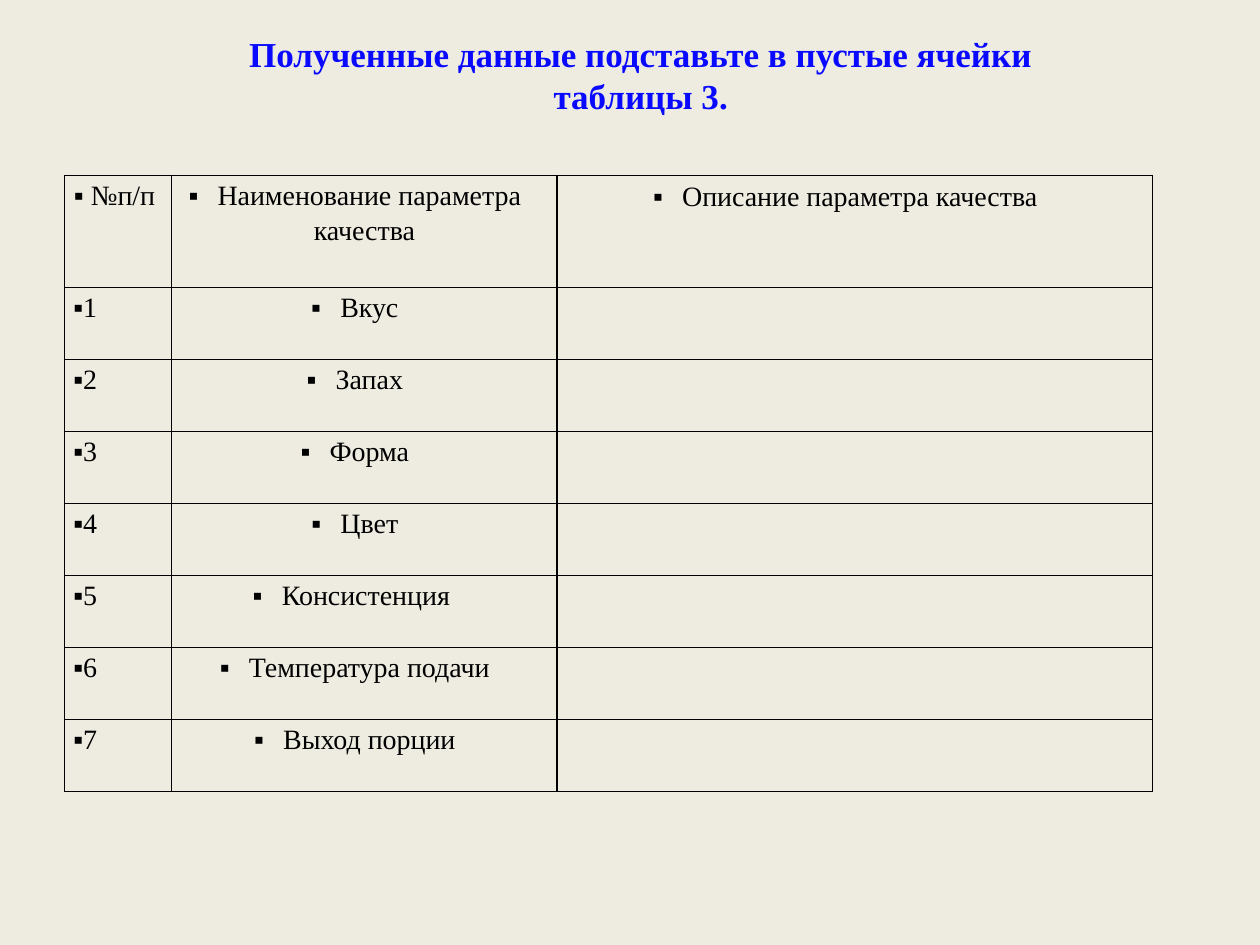
"""Build a slide with a title and a table of quality parameters."""
from lxml import etree
from pptx import Presentation, util as u
from pptx.dml.color import RGBColor
from pptx.enum import text
from pptx.oxml import ns

TITLE = "Полученные данные подставьте в пустые ячейки \vтаблицы 3. "
HEADERS = ["№п/п", "Наименование параметра качества", "Описание параметра качества"]
PARAMETERS = ["Вкус", "Запах", "Форма", "Цвет", "Консистенция ",
              "Температура подачи", "Выход порции"]
COLUMNS = [61.2, 220.3, 340.3]
HEADER_HEIGHT, ROW_HEIGHT = 64.2, 41.15
TABLE_LEFT, TABLE_TOP = 36.9, 100.2
NUMBER_HEADER_HANG, CENTER_HANG = 9.7, 16.6
TITLE_BOX = {"left": 54, "top": 15.1, "width": 629.3, "height": 79.9}
INSETS = {"margin_left": 5, "margin_right": 5, "margin_top": 0, "margin_bottom": 0}
TITLE_FONT = {"name": "Times New Roman", "size": u.Pt(20), "bold": True}
CELL_FONT = {"name": "Times New Roman", "size": u.Pt(16), "bold": False}
CENTER, LEFT = text.PP_ALIGN.CENTER, text.PP_ALIGN.LEFT


def assign(target, values):
    for name, value in values.items():
        setattr(target, name, value)


def in_points(values):
    return {name: u.Pt(value) for name, value in values.items()}


def color(target, value):
    target.rgb = RGBColor.from_string(value)


def add_element(parent, tag, **attributes):
    return etree.SubElement(parent, ns.qn(tag), attributes)


def add_bullet(para, hang):
    para.space_before = u.Pt(3.2)
    properties = para._p.get_or_add_pPr()
    properties.set("marL", "0")
    properties.set("indent", str(-u.Pt(hang)))
    add_element(add_element(properties, "a:buClr"), "a:srgbClr", val="000000")
    add_element(properties, "a:buFont", typeface="Times New Roman")
    add_element(properties, "a:buChar", char="▪")


def add_borders(cell):
    properties = cell._tc.get_or_add_tcPr()
    for side in ("a:lnL", "a:lnR", "a:lnT", "a:lnB"):
        line = add_element(properties, side, w=str(u.Pt(1)))
        add_element(add_element(line, "a:solidFill"), "a:srgbClr", val="000000")


def fill_cell(cell, wording, align, hang, compact):
    add_borders(cell)
    cell.fill.background()
    if not wording:
        return
    para = cell.text_frame.paragraphs[0]
    para.alignment = align
    if compact:
        assign(cell, in_points(INSETS))
        para.line_spacing = 1.15
    add_bullet(para, hang)
    span = para.add_run()
    span.text = wording
    assign(span.font, CELL_FONT)
    color(span.font.color, "000000")


def add_title(page):
    box = page.shapes.title
    assign(box, in_points(TITLE_BOX))
    frame = box.text_frame
    assign(frame, {"text": TITLE, "word_wrap": True,
                   "vertical_anchor": text.MSO_ANCHOR.TOP,
                   "auto_size": text.MSO_AUTO_SIZE.NONE})
    para = frame.paragraphs[0]
    assign(para, {"alignment": CENTER, "space_before": u.Pt(4)})
    for span in para.runs:
        assign(span.font, TITLE_FONT)
        color(span.font.color, "0909FF")


def add_parameters(page):
    rows = [HEADERS] + [[str(i), name, ""] for i, name in enumerate(PARAMETERS, 1)]
    heights = [HEADER_HEIGHT] + [ROW_HEIGHT] * len(PARAMETERS)
    place = [u.Pt(v) for v in (TABLE_LEFT, TABLE_TOP, sum(COLUMNS), sum(heights))]
    table = page.shapes.add_table(len(rows), len(COLUMNS), *place).table
    assign(table, {"first_row": False, "horz_banding": False})
    for column, width in zip(table.columns, COLUMNS):
        column.width = u.Pt(width)
    for r, (row, height) in enumerate(zip(rows, heights)):
        table.rows[r].height = u.Pt(height)
        number_style = (LEFT, 0) if r else (CENTER, NUMBER_HEADER_HANG)
        for c, wording in enumerate(row):
            align, hang = (CENTER, CENTER_HANG) if c else number_style
            fill_cell(table.cell(r, c), wording, align, hang, compact=c < 2)


def main():
    deck = Presentation()
    assign(deck, in_points({"slide_width": 720, "slide_height": 540}))
    page = deck.slides.add_slide(deck.slide_layouts[5])
    page.background.fill.solid()
    color(page.background.fill.fore_color, "EEECE1")
    add_title(page)
    add_parameters(page)
    deck.save("out.pptx")


if __name__ == "__main__":
    main()
